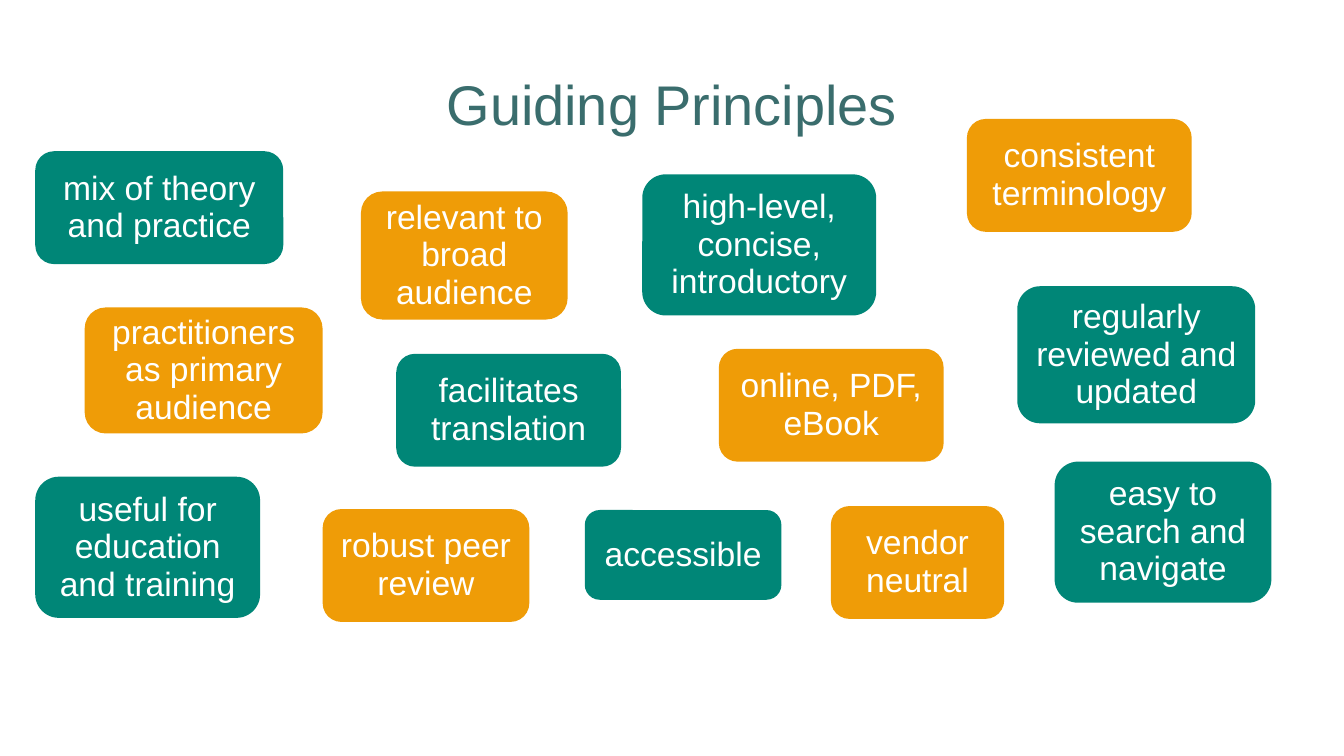
"""Build the Guiding Principles slide: a title above scattered rounded cards."""
from dataclasses import dataclass

from pptx import Presentation
from pptx.dml.color import RGBColor
from pptx.enum.shapes import MSO_SHAPE as Preset
from pptx.enum.text import MSO_ANCHOR as Anchor, PP_ALIGN as Align
from pptx.shapes.autoshape import Shape
from pptx.slide import Slide
from pptx.util import Emu, Pt

EMU_PER_PX = 9144


@dataclass(frozen=True)
class Theme:
    font: str = "Arial"
    title_size: float = 39.9
    card_size: float = 24
    line_spacing: float = 0.93
    title: RGBColor = RGBColor(0x3A, 0x6D, 0x6D)
    card_text: RGBColor = RGBColor(0xFF, 0xFF, 0xFF)
    teal: RGBColor = RGBColor(0x00, 0x86, 0x77)
    orange: RGBColor = RGBColor(0xEF, 0x9C, 0x07)


@dataclass(frozen=True)
class Box:
    left: int
    top: int
    width: int
    height: int

    def emu(self) -> tuple[Emu, ...]:
        return tuple(px(n) for n in (self.left, self.top, self.width, self.height))


@dataclass(frozen=True)
class Principle:
    text: str
    box: Box
    fill: RGBColor


THEME = Theme()
TITLE_BOX = Box(164, 61, 1005, 89)
PRINCIPLES = (
    Principle("mix of theory and practice", Box(35, 150, 246, 112), THEME.teal),
    Principle("high-level, concise, introductory", Box(637, 173, 232, 140), THEME.teal),
    Principle("relevant to broad audience", Box(358, 190, 205, 127), THEME.orange),
    Principle("practitioners as primary audience", Box(84, 305, 236, 125), THEME.orange),
    Principle("useful for education and training", Box(35, 473, 223, 140), THEME.teal),
    Principle("robust peer review", Box(320, 505, 205, 112), THEME.orange),
    Principle("easy to search and navigate", Box(1046, 458, 215, 140), THEME.teal),
    Principle("accessible", Box(580, 506, 195, 89), THEME.teal),
    Principle("online, PDF, eBook", Box(713, 346, 223, 112), THEME.orange),
    Principle("consistent terminology", Box(959, 118, 223, 112), THEME.orange),
    Principle("regularly reviewed and updated", Box(1009, 284, 236, 136), THEME.teal),
    Principle("facilitates translation", Box(393, 351, 223, 112), THEME.teal),
    Principle("vendor neutral", Box(824, 502, 172, 112), THEME.orange),
)


def px(length: int) -> Emu:
    return Emu(length * EMU_PER_PX)


def write_text(shape: Shape, text: str, size: float, color: RGBColor) -> None:
    frame = shape.text_frame
    frame.word_wrap = True
    frame.vertical_anchor = Anchor.MIDDLE
    paragraph = frame.paragraphs[0]
    paragraph.text = text
    paragraph.alignment = Align.CENTER
    paragraph.line_spacing = THEME.line_spacing
    paragraph.font.name = THEME.font
    paragraph.font.size = Pt(size)
    paragraph.font.color.rgb = color


def add_title(slide: Slide, text: str) -> None:
    shape = slide.shapes.add_textbox(*TITLE_BOX.emu())
    frame = shape.text_frame
    frame.margin_left = frame.margin_right = 0
    frame.margin_top = frame.margin_bottom = 0
    write_text(shape, text, THEME.title_size, THEME.title)


def add_card(slide: Slide, principle: Principle) -> None:
    shape = slide.shapes.add_shape(Preset.ROUNDED_RECTANGLE, *principle.box.emu())
    shape.shadow.inherit = False
    shape.fill.solid()
    shape.fill.fore_color.rgb = principle.fill
    shape.line.fill.background()
    write_text(shape, principle.text, THEME.card_size, THEME.card_text)


def main() -> None:
    presentation = Presentation()
    presentation.slide_width = px(1333)
    presentation.slide_height = px(750)
    slide = presentation.slides.add_slide(presentation.slide_layouts[6])
    add_title(slide, "Guiding Principles")
    for principle in PRINCIPLES:
        add_card(slide, principle)
    presentation.save("out.pptx")


if __name__ == "__main__":
    main()
